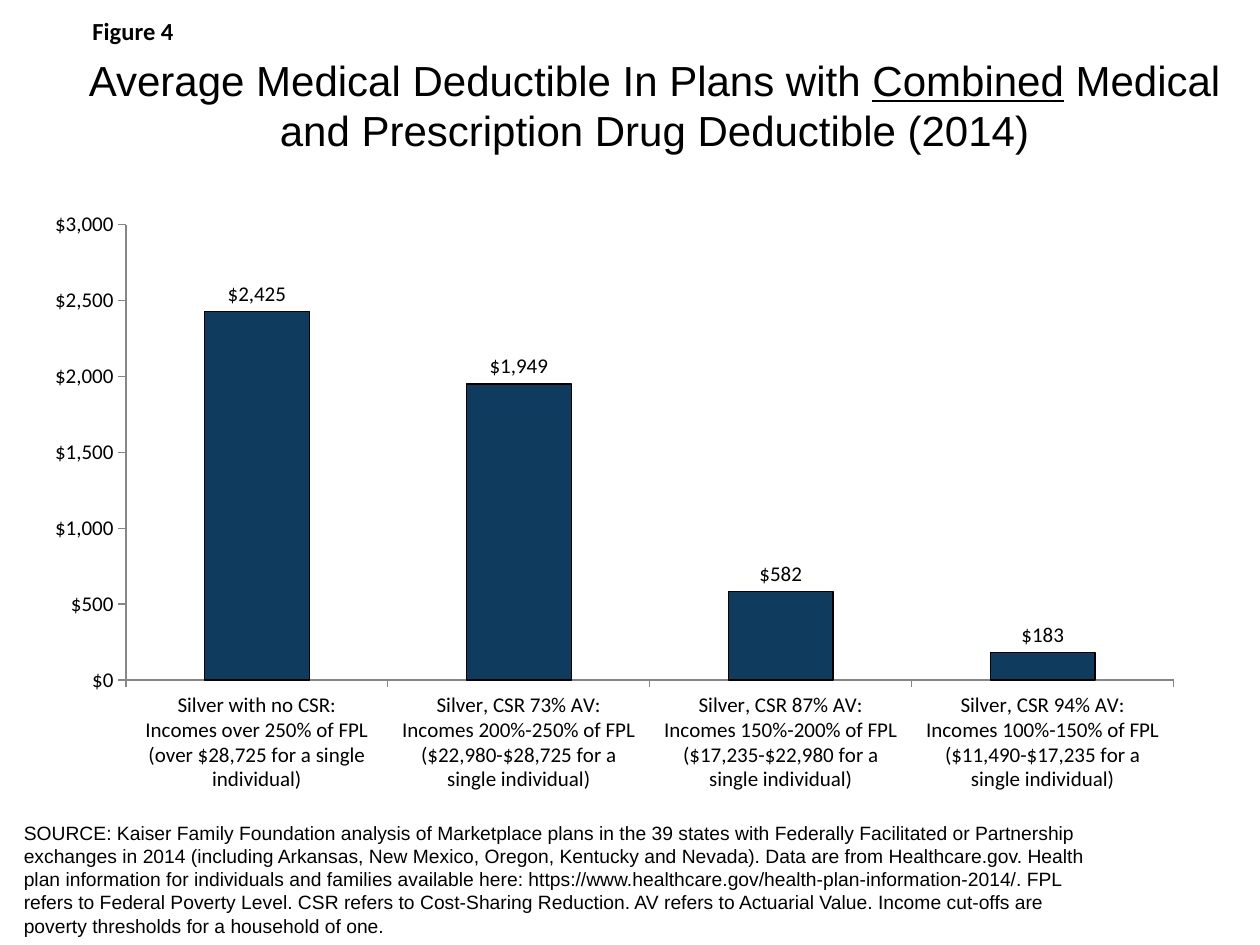
from lxml import etree
from pptx import Presentation
from pptx.chart.data import CategoryChartData
from pptx.dml.color import RGBColor
from pptx.enum.chart import XL_CHART_TYPE, XL_LABEL_POSITION, XL_TICK_MARK
from pptx.enum.text import MSO_ANCHOR, PP_ALIGN
from pptx.oxml.ns import qn
from pptx.util import Inches, Pt

BLACK, NAVY, GRAY = "000000", "0E3B5E", "868686"
DOLLARS = '"$"#,##0'
DEDUCTIBLES = [
    ("Silver with no CSR:\nIncomes over 250% of FPL\n"
     "(over $28,725 for a single individual)", 2425),
    ("Silver, CSR 73% AV:\nIncomes 200%-250% of FPL\n"
     "($22,980-$28,725 for a single individual)", 1949),
    ("Silver, CSR 87% AV:\nIncomes 150%-200% of FPL\n"
     "($17,235-$22,980 for a single individual)", 582),
    ("Silver, CSR 94% AV:\nIncomes 100%-150% of FPL\n"
     "($11,490-$17,235 for a single individual)", 183),
]
SOURCE = (
    "SOURCE: Kaiser Family Foundation analysis of Marketplace plans in the 39 states "
    "with Federally Facilitated or Partnership exchanges in 2014 (including Arkansas, "
    "New Mexico, Oregon, Kentucky and Nevada). Data are from Healthcare.gov. Health plan "
    "information for individuals and families available here: "
    "https://www.healthcare.gov/health-plan-information-2014/. FPL refers to Federal "
    "Poverty Level. CSR refers to Cost-Sharing Reduction. AV refers to Actuarial Value. "
    "Income cut-offs are poverty thresholds for a household of one."
)


def color(hex_code):
    return RGBColor.from_string(hex_code)


def style_font(font, size, name="Calibri", bold=False, underline=False):
    font.name, font.size = name, Pt(size)
    font.bold, font.underline = bold, underline
    font.color.rgb = color(BLACK)


def write(paragraph, text, align=PP_ALIGN.LEFT, **style):
    paragraph.alignment = align
    run = paragraph.add_run()
    run.text = text
    style_font(run.font, **style)


def add_title(slide, left, top, width, height):
    title = slide.shapes.title
    title.left, title.top, title.width, title.height = left, top, width, height
    title.text_frame.vertical_anchor = MSO_ANCHOR.MIDDLE
    heading = title.text_frame.paragraphs[0]
    for text, underline in [
        ("Average Medical Deductible In Plans with ", False),
        ("Combined", True),
        (" Medical and Prescription Drug Deductible (2014)", False),
    ]:
        write(heading, text, align=PP_ALIGN.CENTER, size=24, name="Arial", underline=underline)


def add_note(slide, box, text, **style):
    frame = slide.shapes.add_textbox(*box).text_frame
    frame.word_wrap = True
    write(frame.paragraphs[0], text, **style)


def place_plot(chart, **fractions):
    plot_area = chart._chartSpace.chart.plotArea
    for old in plot_area.findall(qn("c:layout")):
        plot_area.remove(old)
    layout = etree.Element(qn("c:layout"))
    manual = etree.SubElement(layout, qn("c:manualLayout"))
    settings = {"layoutTarget": "inner", "xMode": "edge", "yMode": "edge", **fractions}
    for tag, value in settings.items():
        etree.SubElement(manual, qn(f"c:{tag}")).set("val", str(value))
    plot_area.insert(0, layout)


def add_deductible_chart(slide, left, top, width, height):
    data = CategoryChartData(number_format=DOLLARS)
    data.categories = [plan for plan, _ in DEDUCTIBLES]
    data.add_series("Series 1", [amount for _, amount in DEDUCTIBLES])
    chart = slide.shapes.add_chart(
        XL_CHART_TYPE.COLUMN_CLUSTERED, left, top, width, height, data
    ).chart
    chart.has_legend = chart.has_title = False
    style_font(chart.font, size=16)
    place_plot(chart, x=0.08, y=0.04, w=0.9, h=0.75)

    for axis in (chart.category_axis, chart.value_axis):
        axis.has_major_gridlines = False
        axis.major_tick_mark = XL_TICK_MARK.OUTSIDE
        axis.minor_tick_mark = XL_TICK_MARK.NONE
        axis.format.line.color.rgb = color(GRAY)
        axis.format.line.width = Pt(0.75)
        style_font(axis.tick_labels.font, size=12)
    amounts = chart.value_axis
    amounts.minimum_scale, amounts.maximum_scale, amounts.major_unit = 0, 3000, 500
    amounts.tick_labels.number_format = DOLLARS
    amounts.tick_labels.number_format_is_linked = False

    plot = chart.plots[0]
    plot.gap_width = 150
    plot.vary_by_categories = False
    columns = plot.series[0]
    columns.format.fill.solid()
    columns.format.fill.fore_color.rgb = color(NAVY)
    columns.format.line.color.rgb = color(BLACK)
    columns.format.line.width = Pt(0.75)
    labels = columns.data_labels
    labels.show_value = True
    labels.position = XL_LABEL_POSITION.OUTSIDE_END
    labels.number_format = DOLLARS
    labels.number_format_is_linked = False
    style_font(labels.font, size=12)


def main():
    deck = Presentation()
    deck.slide_width, deck.slide_height = Inches(10), Inches(7.5)
    slide = deck.slides.add_slide(deck.slide_layouts[5])
    source_box = Inches(0.09), Inches(6.47), Inches(8.75), Inches(1.03)
    figure_box = Inches(0.18), Inches(0.08), Inches(1.75), Inches(0.34)
    add_note(slide, source_box, SOURCE, size=11, name="Arial")
    add_deductible_chart(slide, Inches(0.26), Inches(1.59), Inches(9.24), Inches(4.82))
    add_title(slide, Inches(0.49), Inches(0.33), Inches(9.41), Inches(1))
    add_note(slide, figure_box, "Figure 4", align=PP_ALIGN.CENTER, size=14, bold=True)
    deck.save("out.pptx")


if __name__ == "__main__":
    main()
